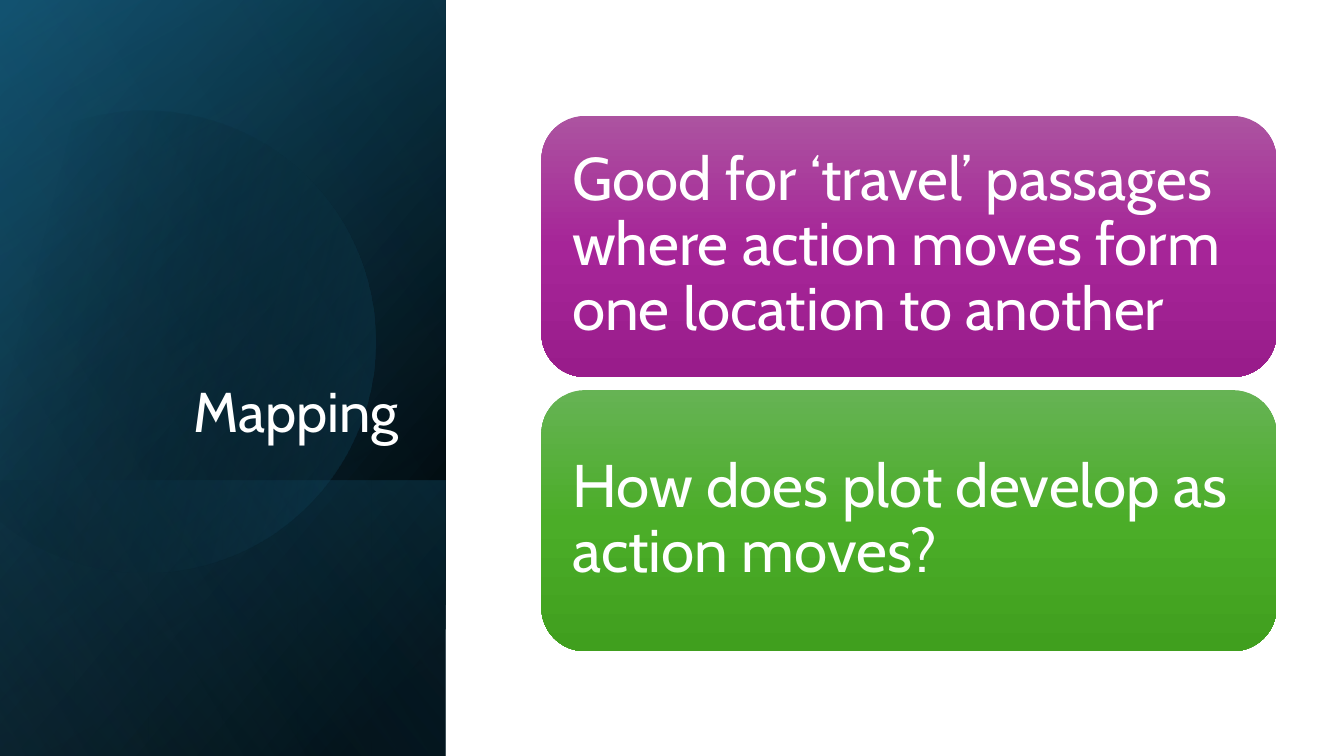
import math

from pptx import Presentation
from pptx.dml.color import RGBColor
from pptx.enum import shapes, text
from pptx.oxml import parse_xml
from pptx.oxml.ns import nsdecls, qn
from pptx.util import Inches, Pt

TITLE = "Mapping"
CARDS = [
    ("Good for ‘travel’ passages where action moves form one location to another",
     ("AC53A0", "A62598", "991C8B")),
    ("How does plot develop as action moves?",
     ("66B354", "4BAD28", "409F1E")),
]
THEME = {
    "font": "Cabin", "text": "FFFFFF", "title_size": 40, "card_size": 43,
    "dark": "000000", "teal": "156082", "deep": "104862", "sky": "46B1E1",
}
DARK, TEAL, DEEP, SKY = (THEME[name] for name in ("dark", "teal", "deep", "sky"))

# Panel layers: frame before the quarter turn, stops (position, colour, opacity), angle
PANEL = (-1.54, 1.54, 7.5, 4.42)
LOWER_PANEL = (0.84, 3.93, 2.74, 4.42)
LAYERS_BELOW_DISC = [
    (PANEL, [(8, DARK, 100), (100, DEEP, 100)], 50),
    (PANEL, [(0, DARK, 0), (99, TEAL, 46)], 30),
    (LOWER_PANEL, [(2, TEAL, 29), (100, DARK, 30)], 130),
]
LAYERS_ABOVE_DISC = [(PANEL, [(0, DARK, 0), (99, SKY, 11)], 120)]

DISC = {"center": (1.43, 3.35), "radius": 2.29, "arc_ends": (-118, -90, 0, 90, 150),
        "rotation": 343.9, "stops": [(29, DARK, 0), (100, TEAL, 43)], "angle": 30}
TITLE_BOX = (0.64, 1.84, 3.41, 2.62)
CARD_LEFT, CARD_TOP, CARD_WIDTH, CARD_HEIGHT, CARD_STEP = 5.37, 1.15, 7.29, 2.59, 2.72


def paint(shape, stops, angle):
    """Give a shape a linear gradient, no outline and no shadow."""
    shape.shadow.inherit = False
    shape.line.fill.background()
    shape.fill.background()
    stop_xml = "".join(
        f'<a:gs pos="{position * 1000}"><a:srgbClr val="{color}">'
        f'<a:alpha val="{opacity * 1000}"/></a:srgbClr></a:gs>'
        for position, color, opacity in stops)
    gradient = parse_xml(
        f'<a:gradFill {nsdecls("a")} rotWithShape="1"><a:gsLst>{stop_xml}</a:gsLst>'
        f'<a:lin ang="{angle * 60000}" scaled="0"/></a:gradFill>')
    properties = shape._element.spPr
    properties.replace(properties.find(qn("a:noFill")), gradient)


def add_layer(slide, frame, stops, angle):
    shape = slide.shapes.add_shape(shapes.MSO_SHAPE.RECTANGLE, *map(Inches, frame))
    shape.rotation = 90
    shape._element.spPr.xfrm.set("flipH", "1")
    paint(shape, stops, angle)


def disc_point(degrees, slide_along=0):
    """Return a point on the disc's rim, moved along its tangent by a share of the radius."""
    turn = math.radians(degrees)
    (center_x, center_y), radius = DISC["center"], DISC["radius"]
    return (Inches(center_x + radius * (math.cos(turn) - slide_along * math.sin(turn))),
            Inches(center_y + radius * (math.sin(turn) + slide_along * math.cos(turn))))


def add_disc(slide):
    """Draw the disc, cut off along a chord at its left, with one Bezier curve per arc."""
    ends = DISC["arc_ends"]
    points = []
    for start, end in zip(ends, ends[1:]):
        handle = 4 / 3 * math.tan(math.radians(end - start) / 4)
        points += [disc_point(start, handle), disc_point(end, -handle), disc_point(end)]
    builder = slide.shapes.build_freeform(*disc_point(ends[0]))
    builder.add_line_segments(points, close=True)
    shape = builder.convert_to_shape()
    outline = next(shape._element.iter(qn("a:lnTo"))).getparent()
    lines = outline.findall(qn("a:lnTo"))
    for first in range(0, len(points), 3):
        curve = parse_xml(f'<a:cubicBezTo {nsdecls("a")}/>')
        lines[first].addprevious(curve)
        for line in lines[first:first + 3]:
            curve.append(line[0])
            outline.remove(line)
    shape.rotation = DISC["rotation"]
    paint(shape, DISC["stops"], DISC["angle"])


def write(shape, content, size, align, anchor, margins):
    frame = shape.text_frame
    frame_format = {"word_wrap": True, "vertical_anchor": anchor}
    for side, margin in zip(("left", "top", "right", "bottom"), margins):
        frame_format[f"margin_{side}"] = Inches(margin)
    for name, value in frame_format.items():
        setattr(frame, name, value)
    paragraph = frame.paragraphs[0]
    paragraph.alignment, paragraph.line_spacing = align, 0.9
    run = paragraph.add_run()
    run.text = content
    run.font.name, run.font.size = THEME["font"], Pt(size)
    run.font.color.rgb = RGBColor.from_string(THEME["text"])


def add_card(slide, index, content, colors):
    shape = slide.shapes.add_shape(
        shapes.MSO_SHAPE.ROUNDED_RECTANGLE, Inches(CARD_LEFT),
        Inches(CARD_TOP + index * CARD_STEP), Inches(CARD_WIDTH), Inches(CARD_HEIGHT))
    paint(shape, [(50 * place, color, 100) for place, color in enumerate(colors)], 90)
    write(shape, content, THEME["card_size"], text.PP_ALIGN.LEFT,
          text.MSO_ANCHOR.MIDDLE, [0.18] * 4)


def main():
    presentation = Presentation()
    presentation.slide_width, presentation.slide_height = Inches(13.33), Inches(7.5)
    slide = presentation.slides.add_slide(presentation.slide_layouts[6])
    for layer in LAYERS_BELOW_DISC:
        add_layer(slide, *layer)
    add_disc(slide)
    for layer in LAYERS_ABOVE_DISC:
        add_layer(slide, *layer)
    title = slide.shapes.add_textbox(*map(Inches, TITLE_BOX))
    write(title, TITLE, THEME["title_size"], text.PP_ALIGN.RIGHT,
          text.MSO_ANCHOR.BOTTOM, (0.1, 0.05, 0.1, 0.05))
    for index, (content, colors) in enumerate(CARDS):
        add_card(slide, index, content, colors)
    presentation.save("out.pptx")


if __name__ == "__main__":
    main()
